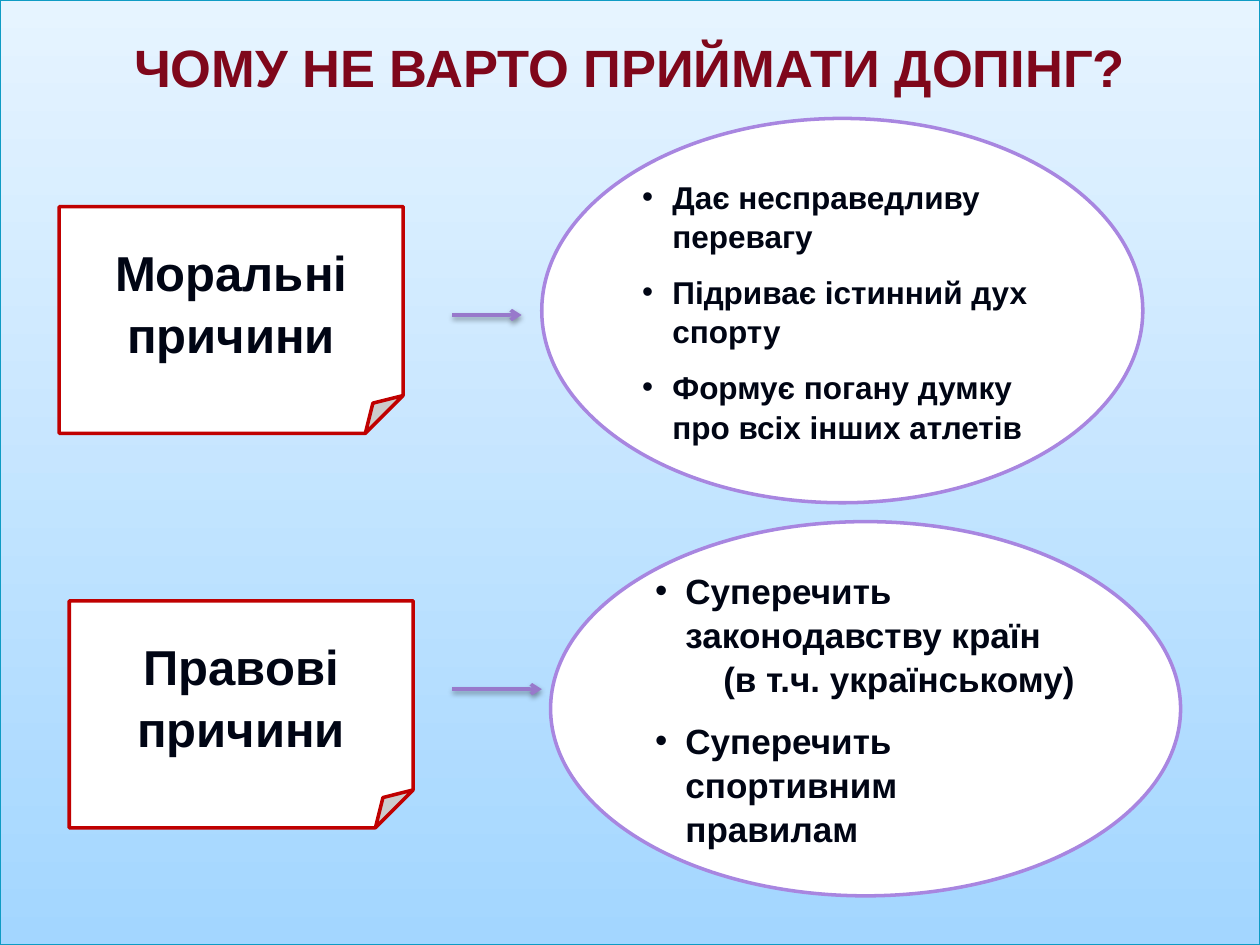
import pptx
import pptx.dml.color
import pptx.enum.dml
import pptx.enum.shapes
import pptx.enum.text
import pptx.oxml
import pptx.oxml.ns
import pptx.util

COLORS = {
    "sky_top": "E6F4FF", "sky_bottom": "A3D6FF", "frame": "0E9BC4",
    "title": "7F071B", "ink": "000514", "white": "FFFFFF",
    "card_line": "C00000", "oval_line": "A886E0", "arrow": "9879CB",
}
RGB = {name: pptx.dml.color.RGBColor.from_string(h) for name, h in COLORS.items()}
SHAPE = pptx.enum.shapes.MSO_SHAPE
ANCHOR = pptx.enum.text.MSO_ANCHOR
LEFT, CENTER = pptx.enum.text.PP_ALIGN.LEFT, pptx.enum.text.PP_ALIGN.CENTER
NS = pptx.oxml.ns.nsdecls("a")
COLS, ROWS = 100, 75

prs = pptx.Presentation()
prs.slide_width, prs.slide_height = pptx.util.Inches(10), pptx.util.Inches(7.5)
cell = prs.slide_width // COLS  # square grid cell
s = prs.slides.add_slide(prs.slide_layouts[5])


def write(tf, text, size=18, color="ink", align=LEFT, before=0, spacing=1.05,
          indent=0, bullet=False):
    """Add one bold paragraph; indent is in grid cells and hangs when bulleted."""
    p = tf.paragraphs[0] if not tf.text else tf.add_paragraph()
    p.alignment, p.line_spacing = align, spacing
    p.space_before = pptx.util.Pt(before)
    r = p.add_run()
    r.text = text
    r.font.name, r.font.size, r.font.bold = "Arial", pptx.util.Pt(size), True
    r.font.color.rgb = RGB[color]
    pPr = p._p.get_or_add_pPr()
    pPr.set("marL", str(int(indent * cell)))
    pPr.set("indent", str(int(-indent * cell) if bullet else 0))
    if bullet:
        pPr.append(pptx.oxml.parse_xml(f'<a:buFont {NS} typeface="Arial"/>'))
        pPr.append(pptx.oxml.parse_xml(f'<a:buChar {NS} char="•"/>'))


def add_panel(kind, box, line):
    """Add a white outlined shape on the grid and return its text frame."""
    sp = s.shapes.add_shape(kind, *(int(v * cell) for v in box))
    sp.shadow.inherit = False
    sp.fill.solid()
    sp.fill.fore_color.rgb = RGB["white"]
    sp.line.color.rgb = RGB[line]
    sp.line.width = pptx.util.Pt(2)
    tf = sp.text_frame
    tf.word_wrap, tf.vertical_anchor = True, ANCHOR.MIDDLE
    return tf


# Title, spread over the whole slide as its backdrop
title = s.shapes.title
title.left = title.top = 0
title.width, title.height = COLS * cell, ROWS * cell
title.fill.gradient()
title.fill.gradient_angle = 270
for stop, name in zip(title.fill.gradient_stops, ("sky_top", "sky_bottom")):
    stop.color.rgb = RGB[name]
    stop.position = 0 if name == "sky_top" else 1
title.line.color.rgb = RGB["frame"]
title.line.width = pptx.util.Pt(0.75)
tf = title.text_frame
tf.auto_size = pptx.enum.text.MSO_AUTO_SIZE.NONE
tf.word_wrap, tf.vertical_anchor = True, ANCHOR.TOP
tf.margin_top = int(2.8 * cell)
write(tf, "ЧОМУ НЕ ВАРТО ПРИЙМАТИ ДОПІНГ?", size=30, color="title",
      align=CENTER, spacing=1.0)

# Cards with the kinds of reasons
for left, top, text in ((4.7, 16.4, "Моральні причини"),
                        (5.5, 47.7, "Правові причини")):
    tf = add_panel(SHAPE.FOLDED_CORNER, (left, top, 27.3, 18), "card_line")
    write(tf, text, size=28, align=CENTER, before=14)

# Ovals with the reasons
tf = add_panel(SHAPE.OVAL, (43, 9.4, 47.7, 30.5), "oval_line")
for text in ("Дає несправедливу перевагу", "Підриває істинний дух спорту",
             "Формує погану думку про всіх інших атлетів"):
    write(tf, text, size=18, before=9, indent=2.4, bullet=True)

tf = add_panel(SHAPE.OVAL, (43.7, 41.4, 50, 29.7), "oval_line")
write(tf, "Суперечить законодавству країн", size=20, before=10, indent=2.4, bullet=True)
write(tf, "(в т.ч. українському)", size=20, indent=5.4)
write(tf, "Суперечить спортивним правилам", size=20, before=10, indent=2.4, bullet=True)

# Arrows from cards to ovals
for end, y in ((41.4, 25), (43, 54.7)):
    cx = s.shapes.add_connector(
        pptx.enum.shapes.MSO_CONNECTOR.STRAIGHT,
        *(int(v * cell) for v in (35.9, y, end, y)))
    cx.line.color.rgb = RGB["arrow"]
    cx.line.width = pptx.util.Pt(2)
    cx.line._get_or_add_ln().append(
        pptx.oxml.parse_xml(f'<a:tailEnd {NS} type="arrow"/>'))
    cx._element.spPr.append(pptx.oxml.parse_xml(
        f'<a:effectLst {NS}><a:outerShdw blurRad="39370" dist="20320" dir="5400000" '
        'rotWithShape="0"><a:srgbClr val="000000"><a:alpha val="38000"/></a:srgbClr>'
        '</a:outerShdw></a:effectLst>'))

prs.save("out.pptx")
